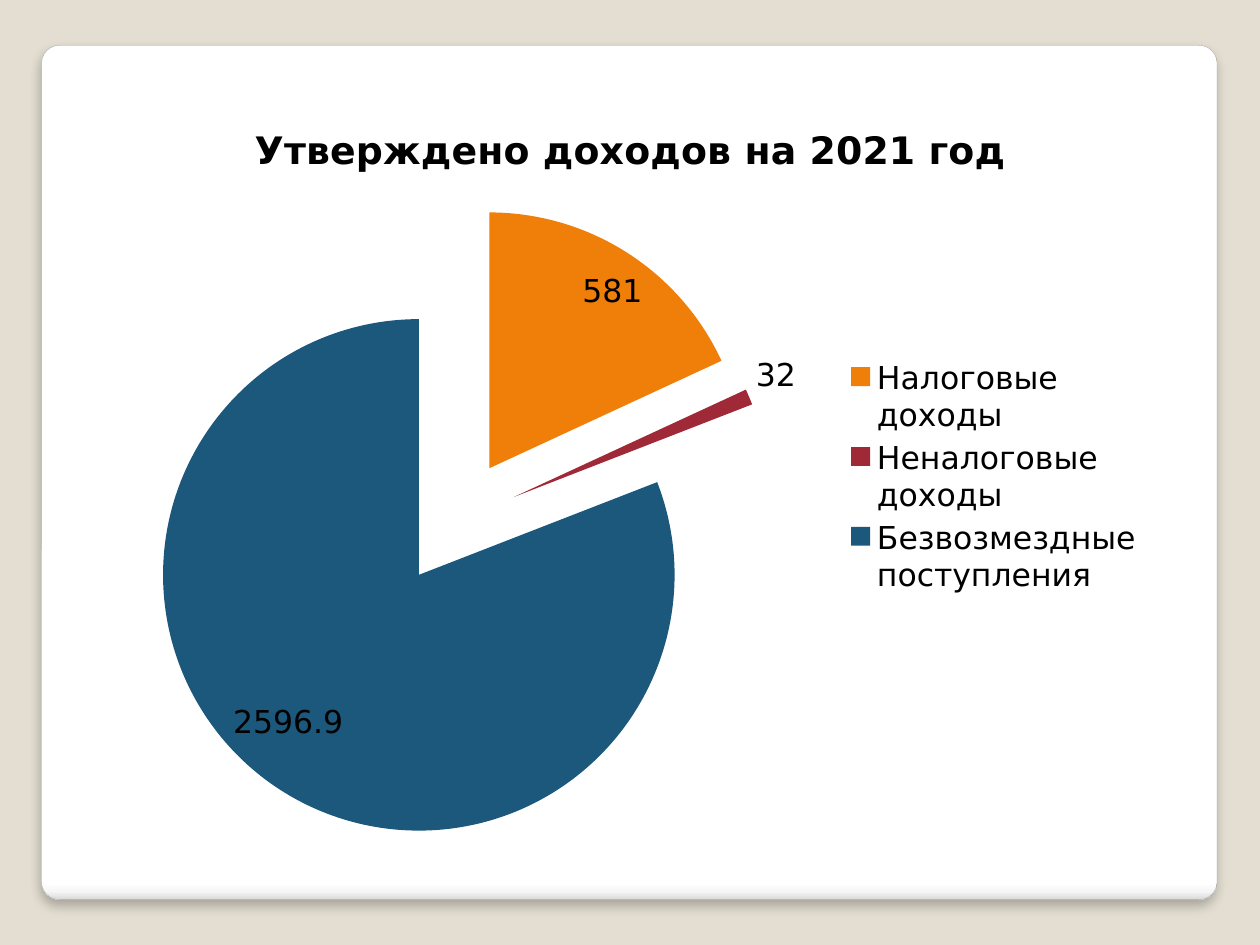
from lxml.etree import SubElement
from pptx import Presentation
from pptx.chart.data import CategoryChartData
from pptx.dml.color import RGBColor
from pptx.enum.chart import XL_CHART_TYPE, XL_LABEL_POSITION, XL_LEGEND_POSITION
from pptx.enum.shapes import MSO_SHAPE
from pptx.oxml.ns import qn
from pptx.util import Inches, Pt

TITLE = "Утверждено доходов на 2021 год"
ORANGE = RGBColor(0xF0, 0x7F, 0x09)
RED = RGBColor(0x9F, 0x29, 0x36)
BLUE = RGBColor(0x1B, 0x58, 0x7C)
INCOME = [
    ("Налоговые доходы", 581, ORANGE),
    ("Неналоговые доходы", 32, RED),
    ("Безвозмездные поступления", 2596.9, BLUE),
]
EXPLOSION = 25

FONT = "DejaVu Sans"
BLACK = RGBColor(0, 0, 0)
BEIGE = RGBColor(0xE3, 0xDE, 0xD1)
GRAY = RGBColor(0xA4, 0xA4, 0xA4)
PANEL_STOPS = [(0, "FFFFFF"), (98, "FFFFFF"), (99, "F7F7F7"), (100, "DADADA")]


def style_font(font, size, bold=False):
    font.name = FONT
    font.size = Pt(size)
    font.bold = bold
    font.color.rgb = BLACK


def add_panel(page):
    panel = page.shapes.add_shape(
        MSO_SHAPE.ROUNDED_RECTANGLE, Inches(0.33), Inches(0.36), Inches(9.33), Inches(6.78)
    )
    panel.adjustments[0] = 0.021
    panel.line.color.rgb = GRAY
    panel.line.width = Pt(0.16)

    panel.fill.gradient()
    panel.fill.gradient_angle = 270
    properties = panel.element.spPr
    stops = properties.find(qn("a:gradFill")).find(qn("a:gsLst"))
    for stop in list(stops):
        stops.remove(stop)
    for percent, color in PANEL_STOPS:
        stop = SubElement(stops, qn("a:gs"), pos=str(percent * 1000))
        SubElement(stop, qn("a:srgbClr"), val=color)

    panel.shadow.inherit = False
    shadow = SubElement(
        properties.find(qn("a:effectLst")), qn("a:outerShdw"),
        blurRad=str(Pt(6)), dist=str(Pt(4)), dir="5400000", algn="tl", rotWithShape="0",
    )
    shadow_color = SubElement(shadow, qn("a:srgbClr"), val="000000")
    SubElement(shadow_color, qn("a:alpha"), val="25000")


def add_income_chart(page):
    data = CategoryChartData()
    data.categories = [name for name, _, _ in INCOME]
    data.add_series("Series 1", [value for _, value, _ in INCOME])
    chart = page.shapes.add_chart(
        XL_CHART_TYPE.PIE_EXPLODED, Inches(0.83), Inches(0.76), Inches(8.35), Inches(6.06), data
    ).chart
    style_font(chart.font, 18)

    chart.has_title = True
    span = chart.chart_title.text_frame.paragraphs[0].add_run()
    span.text = TITLE
    style_font(span.font, 21.6, bold=True)
    chart.chart_title.include_in_layout = False

    chart.has_legend = True
    chart.legend.position = XL_LEGEND_POSITION.RIGHT
    chart.legend.include_in_layout = False
    style_font(chart.legend.font, 18)

    plot = chart.plots[0]
    plot.vary_by_categories = True
    series = plot.series[0]
    explosion = series._element.find(qn("c:explosion"))
    explosion.set("val", str(EXPLOSION))
    for index, (_, _, color) in enumerate(INCOME):
        fill = series.points[index].format.fill
        fill.solid()
        fill.fore_color.rgb = color

    labels = series.data_labels
    labels.show_value = True
    labels.position = XL_LABEL_POSITION.BEST_FIT
    style_font(labels.font, 18)


def main():
    deck = Presentation()
    deck.slide_width = Inches(10)
    deck.slide_height = Inches(7.5)
    page = deck.slides.add_slide(deck.slide_layouts[6])
    page.background.fill.solid()
    page.background.fill.fore_color.rgb = BEIGE
    add_panel(page)
    add_income_chart(page)
    deck.save("out.pptx")


if __name__ == "__main__":
    main()
